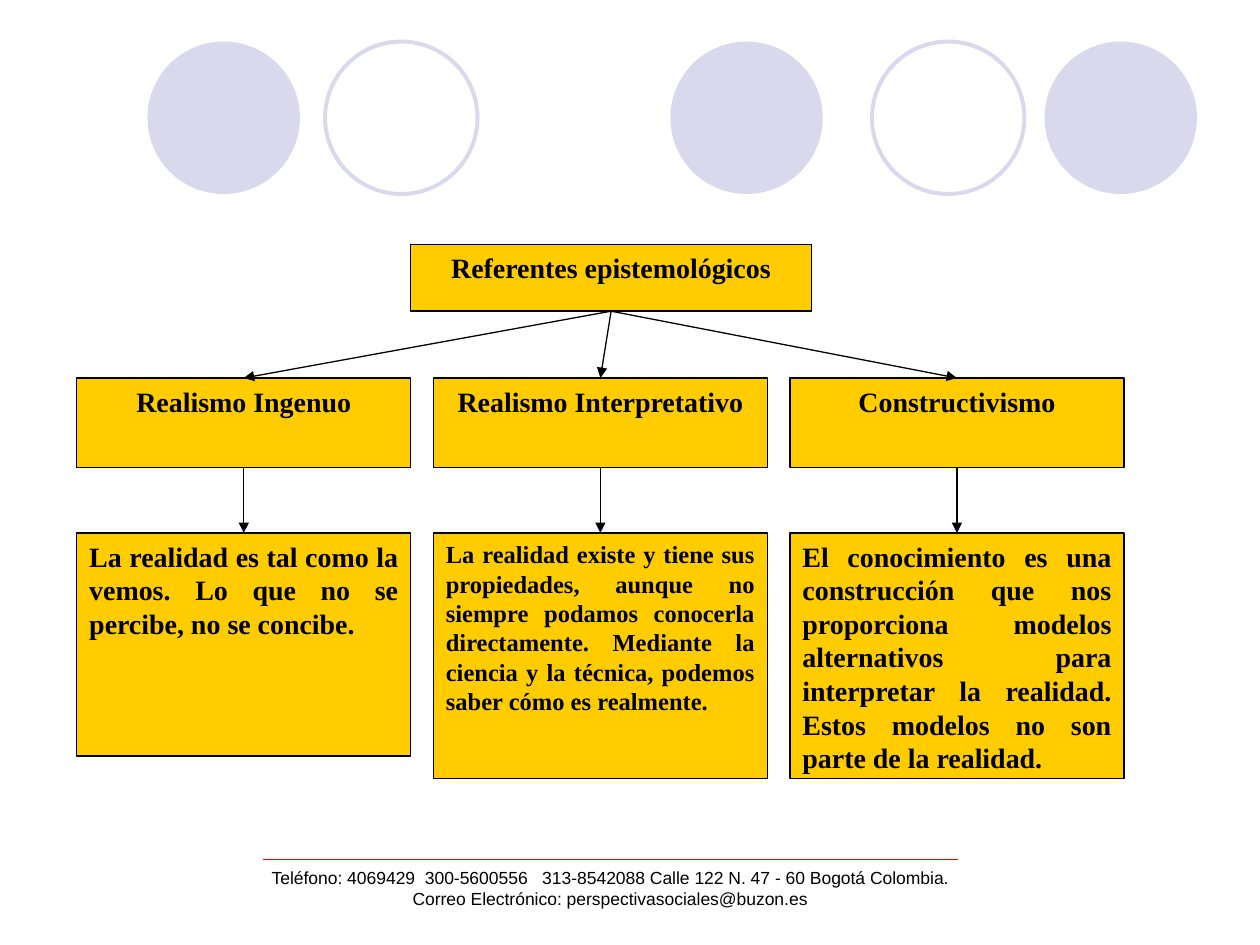
from pptx import Presentation
from pptx.dml.color import RGBColor
from pptx.enum.shapes import MSO_CONNECTOR, MSO_SHAPE
from pptx.enum.text import MSO_ANCHOR, PP_ALIGN
from pptx.oxml.ns import qn
from pptx.util import Inches, Pt
from lxml.etree import SubElement

LILAC, AMBER, BLACK, RED, WHITE = "D9D8EC", "FFCC00", "000000", "FF0000", "FFFFFF"
SERIF, SANS = "Times New Roman", "Arial"
BOTTOM, TOP = 2, 0

CIRCLES = [(1.17, True), (2.58, False), (5.32, True), (6.92, False), (8.29, True)]
HEADING = "Referentes epistemológicos"
BRANCHES = [
    ("Realismo Ingenuo",
     "La realidad es tal como la vemos. Lo que no se percibe, no se concibe.",
     16, 1.77),
    ("Realismo Interpretativo",
     "La realidad existe y tiene sus propiedades, aunque no siempre podamos conocerla "
     "directamente. Mediante la ciencia y la técnica, podemos saber cómo es realmente.",
     14, 1.95),
    ("Constructivismo",
     "El conocimiento es una construcción que nos proporciona modelos alternativos para "
     "interpretar la realidad. Estos modelos no son parte de la realidad.",
     16, 1.95),
]
CONTACT = [
    "Teléfono: 4069429  300-5600556   313-8542088 Calle 122 N. 47 - 60 Bogotá Colombia.",
    "Correo Electrónico: perspectivasociales@buzon.es",
]
COLUMN_LEFT, COLUMN_STEP, COLUMN_WIDTH = 0.61, 2.83, 2.65


def color(value):
    return RGBColor.from_string(value)


def write(shape, lines, size, font, align, bold=False):
    frame = shape.text_frame
    frame.word_wrap = True
    frame.vertical_anchor = MSO_ANCHOR.TOP
    frame.text = "\n".join(lines)
    for para in frame.paragraphs:
        para.alignment = align
        para.font.size = Pt(size)
        para.font.name = font
        para.font.bold = bold
        para.font.color.rgb = color(BLACK)


def add_circle(page, left, filled):
    circle = page.shapes.add_shape(
        MSO_SHAPE.OVAL, Inches(left), Inches(0.33), Inches(1.21), Inches(1.21))
    circle.shadow.inherit = False
    if filled:
        circle.fill.solid()
        circle.fill.fore_color.rgb = color(LILAC)
        circle.line.fill.background()
    else:
        circle.fill.background()
        circle.line.color.rgb = color(LILAC)
        circle.line.width = Pt(2.25)


def add_box(page, left, top, width, height, text, size=16, align=PP_ALIGN.CENTER):
    box = page.shapes.add_shape(
        MSO_SHAPE.RECTANGLE, Inches(left), Inches(top), Inches(width), Inches(height))
    box.shadow.inherit = False
    box.fill.solid()
    box.fill.fore_color.rgb = color(AMBER)
    box.line.color.rgb = color(BLACK)
    box.line.width = Pt(0.75)
    write(box, [text], size, SERIF, align, bold=True)
    return box


def add_line(page, line_color, start=(0, 0), end=(0, 0)):
    line = page.shapes.add_connector(
        MSO_CONNECTOR.STRAIGHT, *(Inches(length) for length in (*start, *end)))
    line.line.color.rgb = color(line_color)
    line.line.width = Pt(0.75)
    SubElement(line._element.spPr, qn("a:effectLst"))
    return line


def add_arrow(page, upper, lower):
    arrow = add_line(page, BLACK)
    arrow.begin_connect(upper, BOTTOM)
    arrow.end_connect(lower, TOP)
    SubElement(arrow.line._get_or_add_ln(), qn("a:tailEnd"), type="triangle")


def main():
    """Build the slide on epistemological references."""
    deck = Presentation()
    deck.slide_width, deck.slide_height = Inches(10), Inches(7.5)
    page = deck.slides.add_slide(deck.slide_layouts[6])
    page.background.fill.solid()
    page.background.fill.fore_color.rgb = color(WHITE)

    for left, filled in CIRCLES:
        add_circle(page, left, filled)

    add_line(page, RED, (2.09, 6.82), (7.6, 6.82))
    contact = page.shapes.add_textbox(
        Inches(1.53), Inches(6.83), Inches(6.62), Inches(0.5))
    write(contact, CONTACT, 10, SANS, PP_ALIGN.CENTER)

    heading = add_box(page, 3.26, 1.94, 3.18, 0.53, HEADING)
    for column, (name, description, size, height) in enumerate(BRANCHES):
        left = COLUMN_LEFT + column * COLUMN_STEP
        branch = add_box(page, left, 3, COLUMN_WIDTH, 0.71, name)
        detail = add_box(page, left, 4.23, COLUMN_WIDTH, height,
                         description, size, PP_ALIGN.JUSTIFY)
        add_arrow(page, heading, branch)
        add_arrow(page, branch, detail)

    deck.save("out.pptx")


if __name__ == "__main__":
    main()
